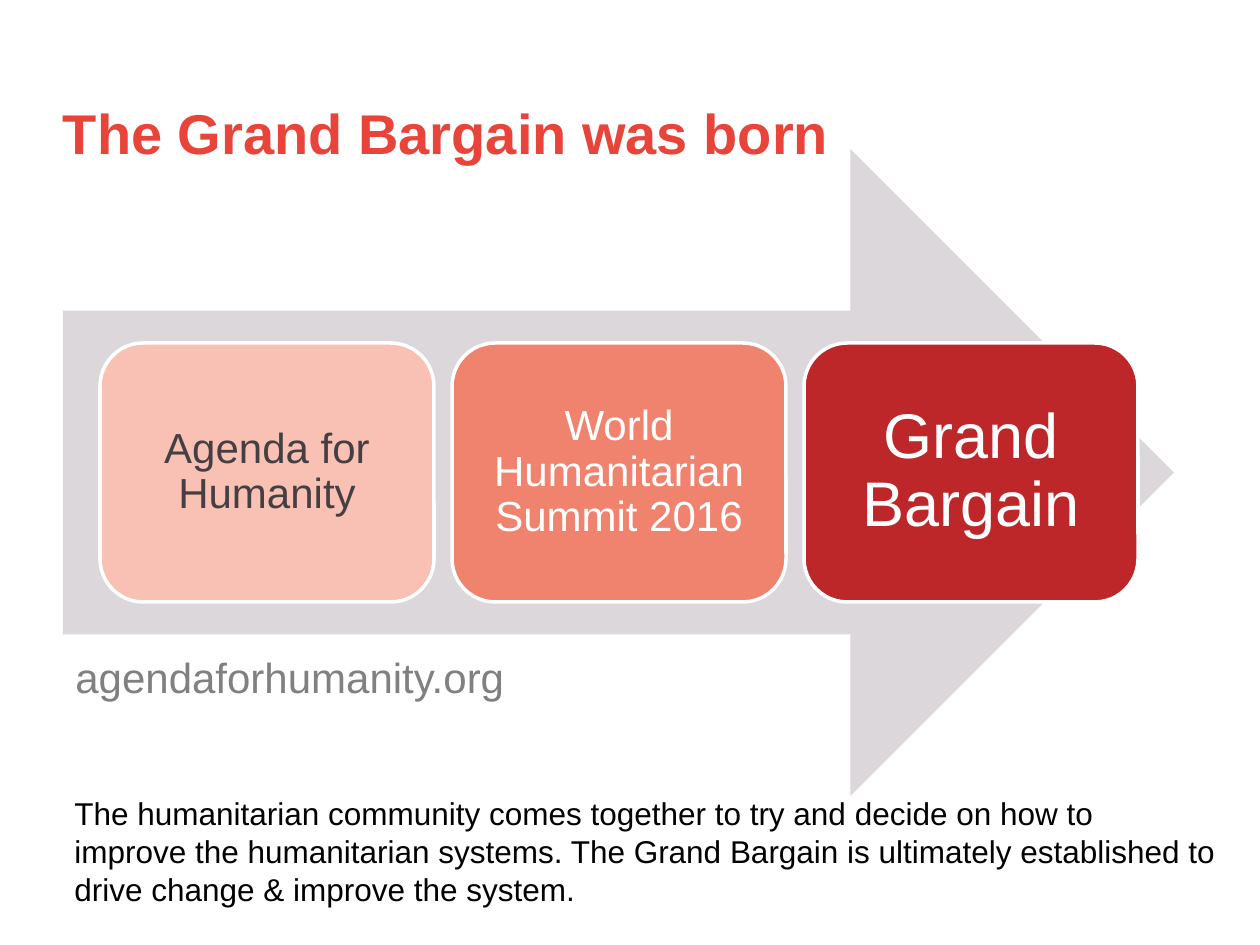
import pptx
import pptx.dml.color
import pptx.enum.shapes
import pptx.enum.text
import pptx.util

RGBColor = pptx.dml.color.RGBColor
SHAPE = pptx.enum.shapes.MSO_SHAPE
ANCHOR = pptx.enum.text.MSO_ANCHOR
ALIGN = pptx.enum.text.PP_ALIGN

WHITE = RGBColor(0xFF, 0xFF, 0xFF)
BLACK = RGBColor(0x00, 0x00, 0x00)
GRAY = RGBColor(0x80, 0x80, 0x80)
CHARCOAL = RGBColor(0x45, 0x3F, 0x43)
SILVER = RGBColor(0xDB, 0xD7, 0xDA)
RED = RGBColor(0xE8, 0x44, 0x3A)
BLUSH = RGBColor(0xF8, 0xC1, 0xB3)
CORAL = RGBColor(0xF0, 0x83, 0x6E)
CRIMSON = RGBColor(0xBD, 0x27, 0x29)

PX_PER_INCH = 126


def px(length):
    return pptx.util.Emu(round(length * 914400 / PX_PER_INCH))


class Painter:
    """Holds the text style and the slide, and draws each kind of element."""

    font_name = "Arial"

    def __init__(self, slide):
        self.slide = slide

    def fill_text(self, frame, lines, size, color, bold=False):
        frame.text = "\n".join(lines)
        for paragraph in frame.paragraphs:
            for run in paragraph.runs:
                run.font.name = self.font_name
                run.font.size = pptx.util.Pt(size)
                run.font.color.rgb = color
                run.font.bold = bold

    def set_insets(self, frame, inset):
        frame.margin_left = frame.margin_right = px(inset)
        frame.margin_top = frame.margin_bottom = px(inset)

    def text(self, box, lines, size, color, wrap=True):
        frame = self.slide.shapes.add_textbox(*map(px, box)).text_frame
        frame.word_wrap = wrap
        self.fill_text(frame, lines, size, color)

    def title(self, box, wording):
        frame = self.slide.shapes.add_textbox(*map(px, box)).text_frame
        frame.word_wrap = True
        frame.vertical_anchor = ANCHOR.BOTTOM
        self.set_insets(frame, 0)
        self.fill_text(frame, [wording], 32, RED, bold=True)

    def shape(self, kind, box, fill):
        shape = self.slide.shapes.add_shape(kind, *map(px, box))
        shape.shadow.inherit = False
        shape.fill.solid()
        shape.fill.fore_color.rgb = fill
        shape.line.fill.background()
        return shape

    def card(self, box, fill, wording, size, color):
        card = self.shape(SHAPE.ROUNDED_RECTANGLE, box, fill)
        card.line.color.rgb = WHITE
        card.line.width = pptx.util.Pt(2)
        frame = card.text_frame
        frame.word_wrap = True
        frame.vertical_anchor = ANCHOR.MIDDLE
        self.set_insets(frame, 19)
        self.fill_text(frame, [wording], size, color)
        frame.paragraphs[0].alignment = ALIGN.CENTER
        frame.paragraphs[0].line_spacing = 0.9


def main():
    deck = pptx.Presentation()
    deck.slide_width, deck.slide_height = px(1260), px(945)
    painter = Painter(deck.slides.add_slide(deck.slide_layouts[6]))

    painter.title((63, 48, 1061, 118), "The Grand Bargain was born")
    painter.shape(SHAPE.RIGHT_ARROW, (63, 149, 1111, 647), SILVER)

    milestones = [
        (BLUSH, "Agenda for Humanity", 24, CHARCOAL),
        (CORAL, "World Humanitarian Summit 2016", 24, WHITE),
        (CRIMSON, "Grand Bargain", 36, WHITE),
    ]
    card_width, card_gap = 334, 18
    for step, milestone in enumerate(milestones):
        left = 100 + step * (card_width + card_gap)
        painter.card((left, 343, card_width, 259), *milestone)

    painter.text((63, 645, 745, 63), ["agendaforhumanity.org"], 24, GRAY)
    painter.text((62, 788, 1177, 127), [
        "The humanitarian community comes together to try and decide on how to",
        "improve the humanitarian systems. The Grand Bargain is ultimately established to",
        "drive change & improve the system.",
    ], 18, BLACK, wrap=False)

    deck.save("out.pptx")


if __name__ == "__main__":
    main()
